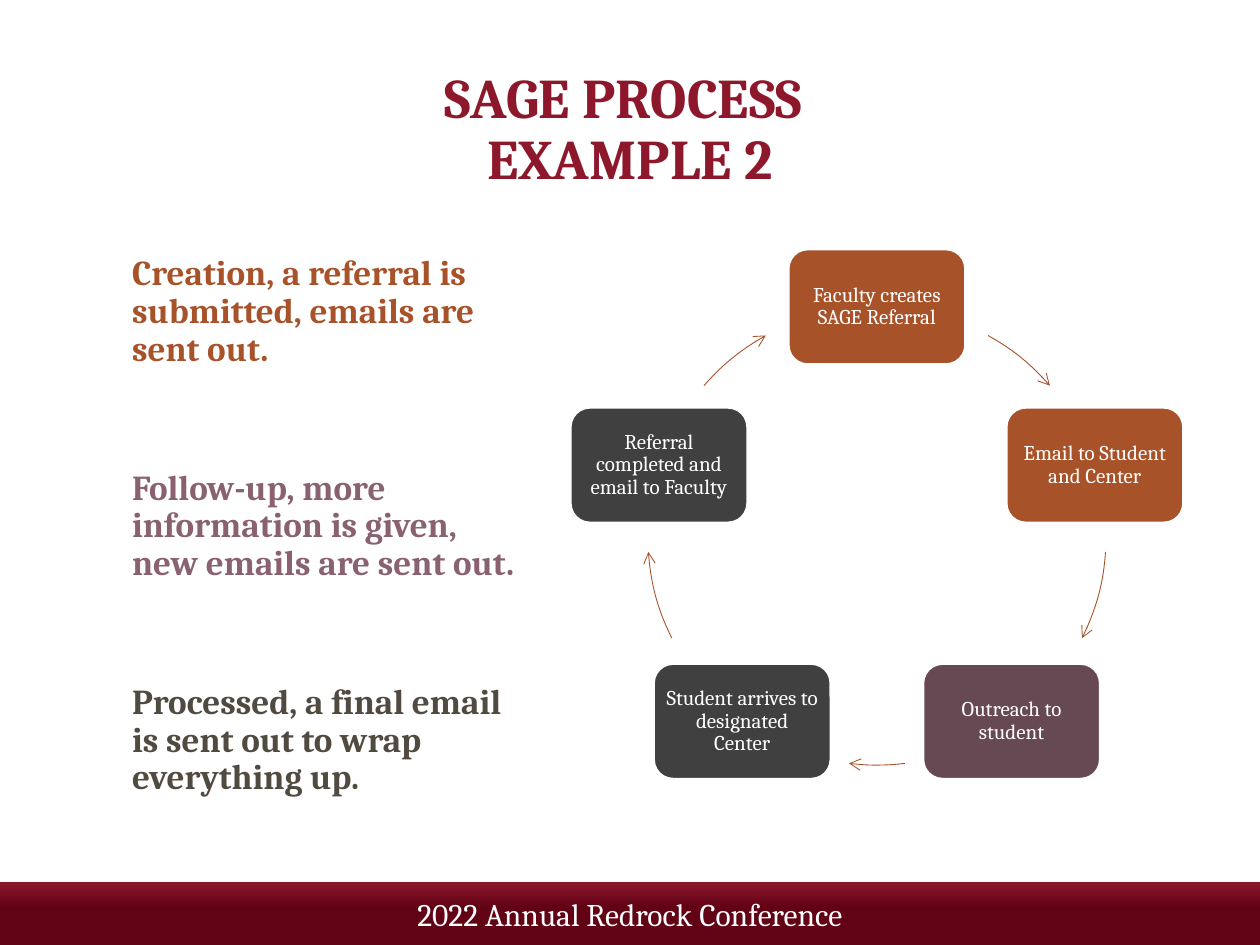
from dataclasses import dataclass
from math import cos, pi, radians, sin

from lxml.etree import SubElement
from pptx import Presentation
from pptx.dml.color import RGBColor
from pptx.enum.shapes import MSO_SHAPE
from pptx.enum.text import MSO_ANCHOR, MSO_AUTO_SIZE, PP_ALIGN
from pptx.oxml.ns import qn
from pptx.util import Inches, Pt

CELL = 0.1  # inches; the slide is a grid of 100 columns by 75 rows
COLUMNS, ROWS = 100, 75


@dataclass(frozen=True)
class Theme:
    font: str = "Cambria"
    crimson: str = "8D182B"
    maroon: str = "610215"
    rust: str = "A85229"
    plum: str = "674954"
    mauve: str = "896170"
    charcoal: str = "404040"
    olive: str = "514A40"
    white: str = "FFFFFF"
    title_size: int = 32
    stage_size: int = 20
    footer_size: int = 18
    step_size: int = 12


@dataclass(frozen=True)
class Box:
    """A rectangle in grid columns and rows."""
    left: float
    top: float
    width: float
    height: float

    def lengths(self):
        return [Inches(n * CELL) for n in (self.left, self.top, self.width, self.height)]


THEME = Theme()

STAGES = [
    ("Creation, a referral is submitted, emails are sent out.", THEME.rust),
    ("Follow-up, more information is given, new emails are sent out.", THEME.mauve),
    ("Processed, a final email is sent out to wrap everything up.", THEME.olive),
]

# Each step: text, fill, then start and end of its outgoing arrow in degrees
# clockwise from the right-hand side of the ring.
STEPS = [
    ("Faculty creates SAGE Referral", THEME.rust, 299, 319),
    ("Email to Student and Center", THEME.rust, 4, 26.5),
    ("Outreach to student", THEME.plum, 83, 97),
    ("Student arrives to designated Center", THEME.charcoal, 153.5, 176),
    ("Referral completed and email to Faculty", THEME.charcoal, 221, 241),
]


def rgb(color):
    return RGBColor.from_string(color)


def write(paragraph, text, *, size, color, bold=False, align=PP_ALIGN.CENTER,
          line_spacing=None, space_before=0, indent=0):
    """Fill a paragraph; a vertical tab in the text breaks the line."""
    paragraph.text = text
    paragraph.alignment = align
    paragraph.line_spacing = line_spacing
    paragraph.space_before = Pt(space_before)
    if indent:
        paragraph._p.get_or_add_pPr().set("marL", str(Inches(indent * CELL)))
    for run in paragraph.runs:
        run.font.name = THEME.font
        run.font.size = Pt(size)
        run.font.bold = bold
        run.font.color.rgb = rgb(color)
    for line_break in paragraph._p.findall(qn("a:br")):
        SubElement(line_break, qn("a:rPr"), sz=str(size * 100))


def add_footer(slide, box):
    band = slide.shapes.add_shape(MSO_SHAPE.RECTANGLE, *box.lengths())
    band.shadow.inherit = False
    band.line.fill.background()
    band.fill.gradient()
    band.fill.gradient_angle = 90
    shades = [(0.6, THEME.maroon), (1, THEME.crimson)]
    for stop, (position, color) in zip(band.fill.gradient_stops, shades):
        stop.position = position
        stop.color.rgb = rgb(color)
    band.text_frame.vertical_anchor = MSO_ANCHOR.MIDDLE
    write(band.text_frame.paragraphs[0], "2022 Annual Redrock Conference",
          size=THEME.footer_size, color=THEME.white)


def add_title(slide, box):
    title = slide.shapes.title
    title.left, title.top, title.width, title.height = box.lengths()
    title.text_frame.vertical_anchor = MSO_ANCHOR.BOTTOM
    title.text_frame.auto_size = MSO_AUTO_SIZE.NONE
    write(title.text_frame.paragraphs[0], "SAGE PROCESS \vEXAMPLE 2",
          size=THEME.title_size, color=THEME.crimson, bold=True, line_spacing=0.9)


def add_stages(slide, box):
    frame = slide.shapes.add_textbox(*box.lengths()).text_frame
    frame.word_wrap = True
    for index, (text, color) in enumerate(STAGES):
        paragraph = frame.add_paragraph() if index else frame.paragraphs[0]
        write(paragraph, text, size=THEME.stage_size, color=color, bold=True,
              align=PP_ALIGN.LEFT, line_spacing=0.9, indent=0.5,
              space_before=57.6 if index else 0)


def add_step(slide, box, text, color):
    step = slide.shapes.add_shape(MSO_SHAPE.ROUNDED_RECTANGLE, *box.lengths())
    step.shadow.inherit = False
    step.fill.solid()
    step.fill.fore_color.rgb = rgb(color)
    step.line.color.rgb = rgb(THEME.white)
    step.line.width = Pt(1)
    frame = step.text_frame
    frame.word_wrap = True
    frame.vertical_anchor = MSO_ANCHOR.MIDDLE
    frame.margin_left = frame.margin_right = Inches(CELL / 2)
    frame.margin_top = frame.margin_bottom = Inches(CELL / 2)
    write(frame.paragraphs[0], text, size=THEME.step_size, color=THEME.white,
          line_spacing=0.9)


def add_arc_arrow(slide, ring, start, end):
    arrow = slide.shapes.add_shape(MSO_SHAPE.ARC, *ring.lengths())
    arrow.shadow.inherit = False
    arrow.fill.background()
    arrow.line.color.rgb = rgb(THEME.rust)
    arrow.line.width = Pt(0.5)
    for index, degrees in enumerate((start, end)):
        arrow.adjustments[index] = degrees * 0.6  # 60000ths of a degree / 100000
    SubElement(arrow.line._get_or_add_ln(), qn("a:tailEnd"), type="arrow")


def add_cycle(slide, box, step_width=14, step_height=9.1):
    """Set the steps evenly around a ring that fills the box."""
    radius = (box.height - step_height) / (1 + cos(pi / len(STEPS)))
    center_x = box.left + box.width / 2
    center_y = box.top + step_height / 2 + radius
    ring = Box(center_x - radius, center_y - radius, 2 * radius, 2 * radius)
    for index, (text, color, start, end) in enumerate(STEPS):
        angle = radians(index * 360 / len(STEPS) - 90)
        step_box = Box(center_x + radius * cos(angle) - step_width / 2,
                       center_y + radius * sin(angle) - step_height / 2,
                       step_width, step_height)
        add_step(slide, step_box, text, color)
        add_arc_arrow(slide, ring, start, end)


def main():
    presentation = Presentation()
    presentation.slide_width = Inches(COLUMNS * CELL)
    presentation.slide_height = Inches(ROWS * CELL)
    slide = presentation.slides.add_slide(presentation.slide_layouts.get_by_name("Title Only"))
    add_footer(slide, Box(0, 70, COLUMNS, 5))
    add_title(slide, Box(10.6, 5.1, 78.8, 10.6))
    add_cycle(slide, Box(45.3, 19.8, 48.6, 42))
    add_stages(slide, Box(9, 19.8, 34, 45))
    presentation.save("out.pptx")


if __name__ == "__main__":
    main()
